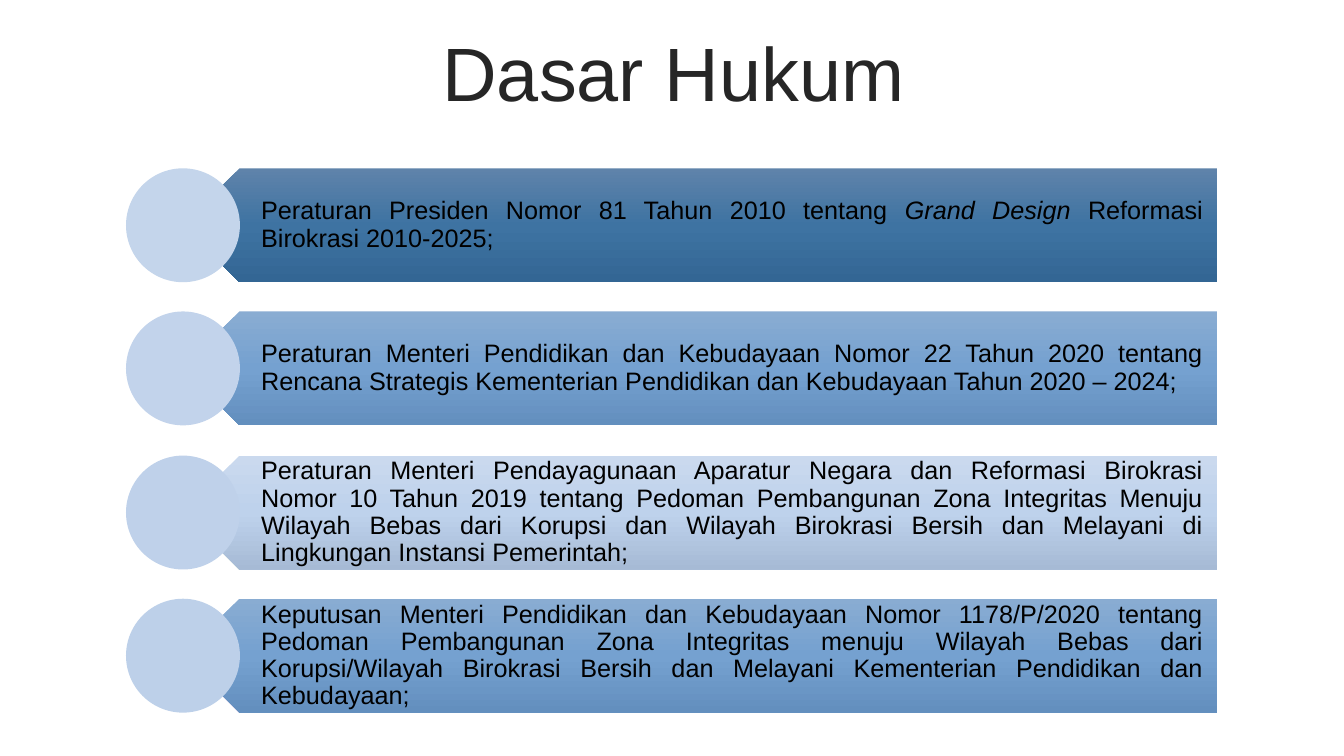
import pptx
import pptx.dml.color
import pptx.enum.shapes
import pptx.enum.text
import pptx.oxml.ns
import pptx.util
from lxml import etree

Inches = pptx.util.Inches
Pt = pptx.util.Pt
RGBColor = pptx.dml.color.RGBColor
MSO_SHAPE = pptx.enum.shapes.MSO_SHAPE
PP_ALIGN = pptx.enum.text.PP_ALIGN
MIDDLE = pptx.enum.text.MSO_ANCHOR.MIDDLE
qn = pptx.oxml.ns.qn

TITLE_COLOR = RGBColor(0x26, 0x26, 0x26)
TEXT_COLOR = RGBColor(0x00, 0x00, 0x00)
NAVY = (RGBColor(0x5F, 0x83, 0xAA), RGBColor(0x3E, 0x73, 0xA2), RGBColor(0x33, 0x66, 0x94))
BLUE = (RGBColor(0x89, 0xAC, 0xD2), RGBColor(0x75, 0xA1, 0xD0), RGBColor(0x63, 0x8F, 0xBE))
PALE = (RGBColor(0xCA, 0xD9, 0xEE), RGBColor(0xBE, 0xD2, 0xEC), RGBColor(0xA6, 0xBA, 0xD5))

ROW_TOP, ROW_PITCH, ROW_HEIGHT = 1.67, 1.423, 1.13

# Each row: band gradient, circle colour, runs of (text, italic)
REGULATIONS = [
    (NAVY, RGBColor(0xC4, 0xD5, 0xEB), [
        ("Peraturan Presiden Nomor 81 Tahun 2010 tentang ", False),
        ("Grand Design", True),
        (" Reformasi Birokrasi 2010-2025;", False)]),
    (BLUE, RGBColor(0xC2, 0xD3, 0xEB), [
        ("Peraturan Menteri Pendidikan dan Kebudayaan Nomor 22 Tahun 2020 tentang "
         "Rencana Strategis Kementerian Pendidikan dan Kebudayaan Tahun 2020 – 2024;", False)]),
    (PALE, RGBColor(0xBF, 0xD1, 0xEA), [
        ("Peraturan Menteri Pendayagunaan Aparatur Negara dan Reformasi Birokrasi "
         "Nomor 10 Tahun 2019 tentang Pedoman Pembangunan Zona Integritas Menuju "
         "Wilayah Bebas dari Korupsi dan Wilayah Birokrasi Bersih dan Melayani di "
         "Lingkungan Instansi Pemerintah;", False)]),
    (BLUE, RGBColor(0xBD, 0xD0, 0xE9), [
        ("Keputusan Menteri Pendidikan dan Kebudayaan Nomor 1178/P/2020 tentang "
         "Pedoman Pembangunan Zona Integritas menuju Wilayah Bebas dari "
         "Korupsi/Wilayah Birokrasi Bersih dan Melayani Kementerian Pendidikan dan "
         "Kebudayaan;", False)]),
]


def set_attributes(target, values):
    for name, value in values.items():
        setattr(target, name, value)


def write_paragraph(text_frame, runs, size, color, paragraph_format):
    paragraph = text_frame.paragraphs[0]
    set_attributes(paragraph, {"line_spacing": 0.9, **paragraph_format})
    for text, italic in runs:
        run = paragraph.add_run()
        run.text = text
        set_attributes(run.font, {"name": "Arial", "size": Pt(size), "italic": italic})
        run.font.color.rgb = color


def add_plain_shape(group, kind, left, top, width):
    shape = group.shapes.add_shape(
        kind, Inches(left), Inches(top), Inches(width), Inches(ROW_HEIGHT))
    shape.shadow.inherit = False
    shape.line.fill.background()
    return shape


def fill_vertical_gradient(shape, colors):
    shape.fill.gradient()
    gradient = shape._element.spPr.find(qn("a:gradFill"))
    gradient.set("rotWithShape", "0")
    gradient.find(qn("a:lin")).set("ang", "5400000")
    stops = gradient.find(qn("a:gsLst"))
    for stop in list(stops):
        stops.remove(stop)
    for position, color in zip((0, 50000, 100000), colors):
        stop = etree.SubElement(stops, qn("a:gs"), pos=str(position))
        etree.SubElement(stop, qn("a:srgbClr"), val=str(color))


def add_title(slide):
    title = slide.shapes.title
    set_attributes(title, {"left": Inches(0.35), "top": Inches(0.37),
                           "width": Inches(12.66), "height": Inches(0.79)})
    title.text_frame.vertical_anchor = MIDDLE
    write_paragraph(title.text_frame, [("Dasar Hukum", False)], 54, TITLE_COLOR,
                    {"alignment": PP_ALIGN.CENTER, "space_before": Pt(10)})


def add_regulation(group, top, band_colors, circle_color, runs):
    # Band pointing left
    band = add_plain_shape(group, MSO_SHAPE.PENTAGON, 1.81, top, 10.26)
    band.rotation = 180
    fill_vertical_gradient(band, band_colors)

    # Text over the band
    text_box = group.shapes.add_textbox(
        Inches(2.09), Inches(top), Inches(9.98), Inches(ROW_HEIGHT))
    set_attributes(text_box.text_frame, {
        "word_wrap": True, "vertical_anchor": MIDDLE,
        "margin_left": Inches(0.5), "margin_right": Inches(0.14),
        "margin_top": Inches(0.07), "margin_bottom": Inches(0.07)})
    write_paragraph(text_box.text_frame, runs, 18, TEXT_COLOR,
                    {"alignment": PP_ALIGN.JUSTIFY})

    # Circle over the point
    circle = add_plain_shape(group, MSO_SHAPE.OVAL, 1.25, top, ROW_HEIGHT)
    circle.fill.solid()
    circle.fill.fore_color.rgb = circle_color


def main():
    presentation = pptx.Presentation()
    set_attributes(presentation, {"slide_width": Inches(13.33), "slide_height": Inches(7.5)})
    slide = presentation.slides.add_slide(presentation.slide_layouts[5])
    add_title(slide)
    group = slide.shapes.add_group_shape()
    for index, regulation in enumerate(REGULATIONS):
        add_regulation(group, round(ROW_TOP + index * ROW_PITCH, 2), *regulation)
    presentation.save("out.pptx")


if __name__ == "__main__":
    main()
